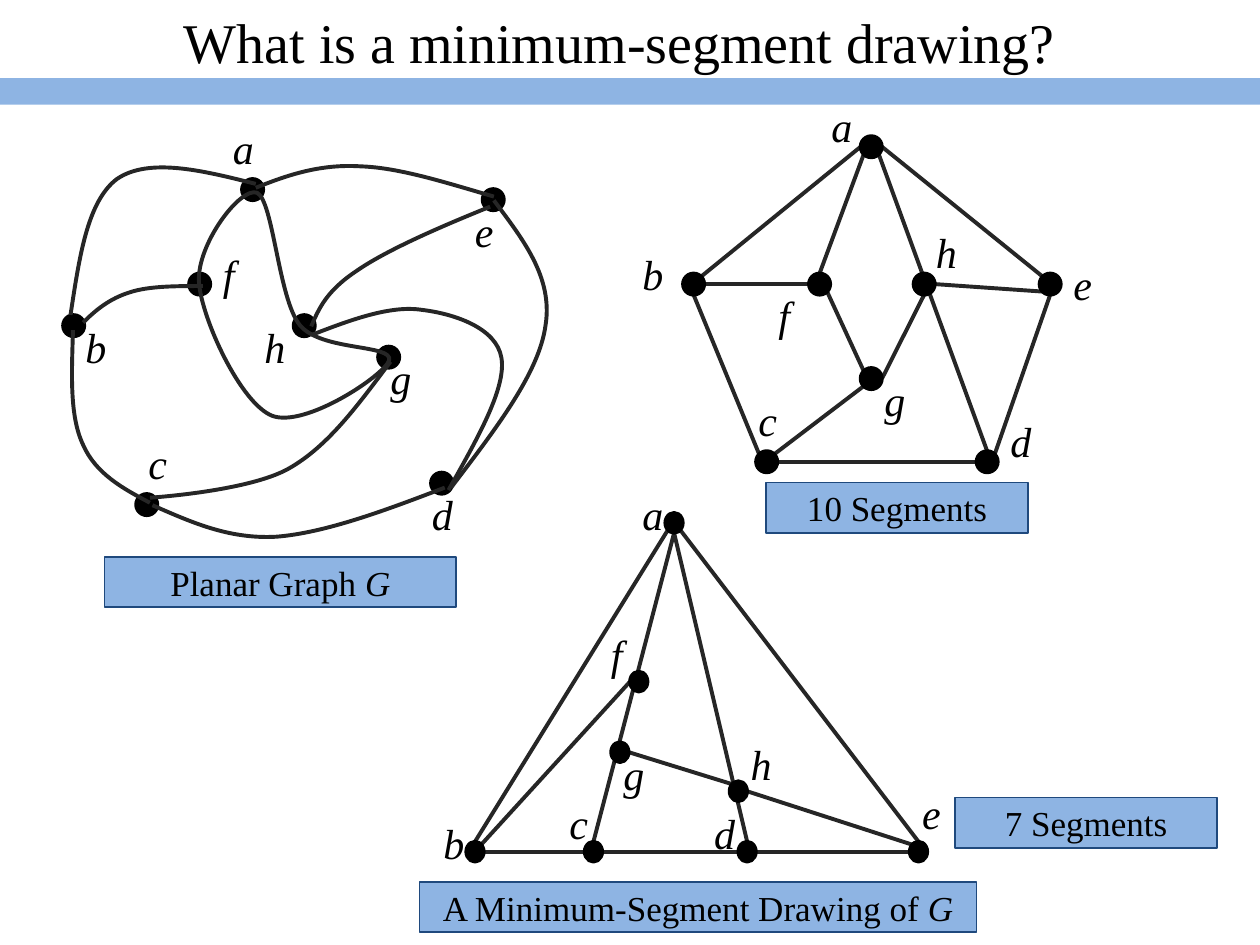
from lxml import etree
from pptx import Presentation
from pptx.dml.color import RGBColor
from pptx.enum import shapes, text
from pptx.oxml.ns import qn
from pptx.util import Inches, Pt

FONT = "Times New Roman"
BLACK, INK, BLUE, NAVY = "000000", "262626", "8EB4E3", "1F497D"
TITLE = "What is a minimum-segment drawing?"

# vertices: name -> (dot left, dot top, label left, label top)
# edges: vertex and compass side of its dot, at both ends
# curves: a start point, then two controls and an end point for each Bezier piece
PLANAR = {
    "dot": (0.17, 0.17), "label": (0.42, 0.5),
    "vertices": {
        "a": (1.92, 1.42, 1.75, 0.92), "b": (0.5, 2.5, 0.58, 2.5),
        "c": (1.08, 3.92, 1.08, 3.42), "d": (3.42, 3.75, 3.33, 3.83),
        "e": (3.83, 1.5, 3.67, 1.58), "f": (1.5, 2.17, 1.67, 1.92),
        "g": (3, 2.75, 3, 2.75), "h": (2.33, 2.5, 2, 2.5),
    },
    "edges": [],
    "curves": [
        [(2.03, 1.46), (1.6, 1.35), (1.18, 1.25), (0.93, 1.42),
         (0.69, 1.6), (0.63, 2.05), (0.56, 2.5)],
        [(0.58, 2.62), (0.57, 2.96), (0.55, 3.3), (0.66, 3.53),
         (0.76, 3.76), (0.98, 3.88), (1.19, 3.99)],
        [(2.03, 1.49), (2.28, 1.39), (2.54, 1.3), (2.86, 1.32),
         (3.17, 1.33), (3.54, 1.45), (3.92, 1.56)],
        [(1.21, 4.01), (1.51, 4.14), (1.81, 4.28), (2.19, 4.26),
         (2.58, 4.23), (3.06, 4.05), (3.53, 3.87)],
        [(2.04, 1.53), (1.91, 1.48), (1.56, 1.94), (1.58, 2.24),
         (1.6, 2.53), (1.91, 3.2), (2.16, 3.3),
         (2.42, 3.4), (3.05, 2.98), (3.09, 2.86),
         (3.12, 2.73), (2.55, 2.79), (2.38, 2.58),
         (2.21, 2.37), (2.17, 1.59), (2.04, 1.53)],
        [(2.47, 2.59), (2.53, 2.45), (2.59, 2.31), (2.83, 2.15),
         (3.06, 1.99), (3.47, 1.81), (3.89, 1.64)],
        [(3.1, 2.87), (2.85, 3.2), (2.61, 3.54), (2.29, 3.72),
         (1.97, 3.9), (1.19, 3.95), (1.19, 3.95)],
        [(0.66, 2.56), (0.76, 2.46), (0.87, 2.37), (1.03, 2.32),
         (1.18, 2.27), (1.4, 2.27), (1.61, 2.27)],
        [(2.47, 2.66), (2.78, 2.54), (3.1, 2.42), (3.35, 2.46),
         (3.6, 2.49), (3.94, 2.6), (3.98, 2.84),
         (4.02, 3.08), (3.79, 3.48), (3.56, 3.89)],
        [(3.92, 1.59), (4.15, 1.9), (4.39, 2.2), (4.33, 2.58),
         (4.28, 2.96), (3.93, 3.41), (3.58, 3.87)],
    ],
}
TEN_SEGMENTS = {
    "dot": (0.17, 0.17), "label": (0.42, 0.5),
    "vertices": {
        "a": (6.83, 1.08, 6.5, 0.75), "b": (5.42, 2.17, 5, 1.92),
        "c": (6, 3.58, 5.92, 3.08), "d": (7.75, 3.58, 7.92, 3.25),
        "e": (8.25, 2.17, 8.42, 2), "f": (6.42, 2.17, 6.08, 2.25),
        "g": (6.83, 2.92, 6.92, 2.92), "h": (7.25, 2.17, 7.33, 1.75),
    },
    "edges": ["d n a se", "b ne a w", "g e h s", "d ne e s", "c e d w", "a e e nw",
              "c nw b s", "f se g nw", "c ne g sw", "f n a sw", "e sw h e", "b e f w"],
    "curves": [],
}
SEVEN_SEGMENTS = {
    "dot": (0.14, 0.16), "label": (0.36, 0.48),
    "vertices": {
        "a": (5.28, 4.07, 5, 3.83), "b": (3.7, 6.68, 3.42, 6.44),
        "c": (4.64, 6.68, 4.42, 6.28), "d": (5.86, 6.68, 5.57, 6.36),
        "e": (7.22, 6.68, 7.22, 6.2), "f": (5, 5.33, 4.75, 4.94),
        "g": (4.85, 5.89, 4.85, 5.89), "h": (5.79, 6.2, 5.86, 5.81),
    },
    "edges": ["a s c n", "d n a s", "b n a sw", "g e h nw", "d e e w", "c e d w",
              "a se e n", "c w b e", "e nw h e", "b ne f w"],
    "curves": [],
}
CAPTIONS = [  # left, top, width, upright text, italic text
    (0.83, 4.42, 2.79, "Planar Graph ", "G"),
    (6.08, 3.83, 2.08, "10 Segments", ""),
    (7.58, 6.33, 2.08, "7 Segments", ""),
    (3.33, 7, 4.42, "A Minimum-Segment Drawing of ", "G"),
]


def color(value):
    return RGBColor.from_string(value)


def set_line(shape, value, width):
    shape.line.color.rgb = color(value)
    shape.line.width = Pt(width)


def add_filled(parent, kind, box, fill, line=None, width=1):
    shape = parent.add_shape(kind, *map(Inches, box))
    shape.shadow.inherit = False
    shape.fill.solid()
    shape.fill.fore_color.rgb = color(fill)
    if line:
        set_line(shape, line, width)
    else:
        shape.line.fill.background()
    return shape


def write(shape, runs, size, alignment, **frame_format):
    """Fill the first paragraph with (text, italic) runs."""
    frame = shape.text_frame
    for name, value in {"word_wrap": True, **frame_format}.items():
        setattr(frame, name, value)
    paragraph = frame.paragraphs[0]
    paragraph.alignment = alignment
    for content, italic in runs:
        run = paragraph.add_run()
        run.text = content
        for name, value in {"name": FONT, "size": Pt(size), "italic": italic}.items():
            setattr(run.font, name, value)
        run.font.color.rgb = color(BLACK)


def bezier_point(points, t):
    weights = ((1 - t) ** 3, 3 * t * (1 - t) ** 2, 3 * t ** 2 * (1 - t), t ** 3)
    return tuple(sum(w * p[axis] for w, p in zip(weights, points)) for axis in (0, 1))


def add_curve(parent, points):
    """Size a freeform by points along the curve, then give it true Bezier pieces."""
    pieces = [points[i:i + 4] for i in range(0, len(points) - 1, 3)]
    samples = [bezier_point(piece, step / 20) for piece in pieces for step in range(1, 21)]
    builder = parent.build_freeform(*map(Inches, points[0]))
    builder.add_line_segments([tuple(map(Inches, point)) for point in samples], close=False)
    shape = builder.convert_to_shape()
    shape.shadow.inherit = False
    shape.fill.background()
    set_line(shape, INK, 2.25)
    outline = next(shape.element.iter(qn("a:path")))
    for line_step in outline.findall(qn("a:lnTo")):
        outline.remove(line_step)
    for piece in pieces:
        bezier = etree.SubElement(outline, qn("a:cubicBezTo"))
        for x, y in piece[1:]:
            etree.SubElement(bezier, qn("a:pt"), x=str(Inches(x) - shape.left),
                             y=str(Inches(y) - shape.top))


def dot_side(graph, vertex, side):
    """Point on the rim of a vertex dot in a compass direction."""
    reach = 0.5 if len(side) == 1 else 0.35
    across = ("e" in side) - ("w" in side)
    down = ("s" in side) - ("n" in side)
    left, top = graph["vertices"][vertex][:2]
    width, height = graph["dot"]
    return (Inches(left + width * (0.5 + reach * across)),
            Inches(top + height * (0.5 + reach * down)))


def add_graph(slide, graph):
    parent = slide.shapes.add_group_shape().shapes
    for edge in graph["edges"]:
        start, start_side, end, end_side = edge.split()
        line = parent.add_connector(shapes.MSO_CONNECTOR.STRAIGHT,
                                    *dot_side(graph, start, start_side),
                                    *dot_side(graph, end, end_side))
        set_line(line, INK, 2.25)
        etree.SubElement(line.element.spPr, qn("a:effectLst"))
    for name, (left, top, label_left, label_top) in graph["vertices"].items():
        add_filled(parent, shapes.MSO_SHAPE.OVAL, (left, top, *graph["dot"]), BLACK, BLACK, 2)
        label = parent.add_textbox(*map(Inches, (label_left, label_top, *graph["label"])))
        write(label, [(name, True)], 24, text.PP_ALIGN.LEFT,
              auto_size=text.MSO_AUTO_SIZE.SHAPE_TO_FIT_TEXT)
    for points in graph["curves"]:
        add_curve(parent, points)


def main():
    presentation = Presentation()
    presentation.slide_width, presentation.slide_height = Inches(10), Inches(7.5)
    slide = presentation.slides.add_slide(presentation.slide_layouts[5])
    centered = {"alignment": text.PP_ALIGN.CENTER, "vertical_anchor": text.MSO_ANCHOR.MIDDLE}

    title = slide.shapes.title
    title.left, title.top, title.width, title.height = map(Inches, (0.42, 0.08, 9, 0.5))
    write(title, [(TITLE, False)], 32, auto_size=text.MSO_AUTO_SIZE.NONE, **centered)
    add_filled(slide.shapes, shapes.MSO_SHAPE.RECTANGLE, (0, 0.62, 10, 0.21), BLUE)

    for graph in (TEN_SEGMENTS, SEVEN_SEGMENTS, PLANAR):
        add_graph(slide, graph)
    for left, top, width, upright, italic in CAPTIONS:
        caption = add_filled(slide.shapes, shapes.MSO_SHAPE.RECTANGLE,
                             (left, top, width, 0.4), BLUE, NAVY)
        runs = [(upright, False)] + ([(italic, True)] if italic else [])
        write(caption, runs, 20, **centered)

    presentation.save("out.pptx")


if __name__ == "__main__":
    main()
